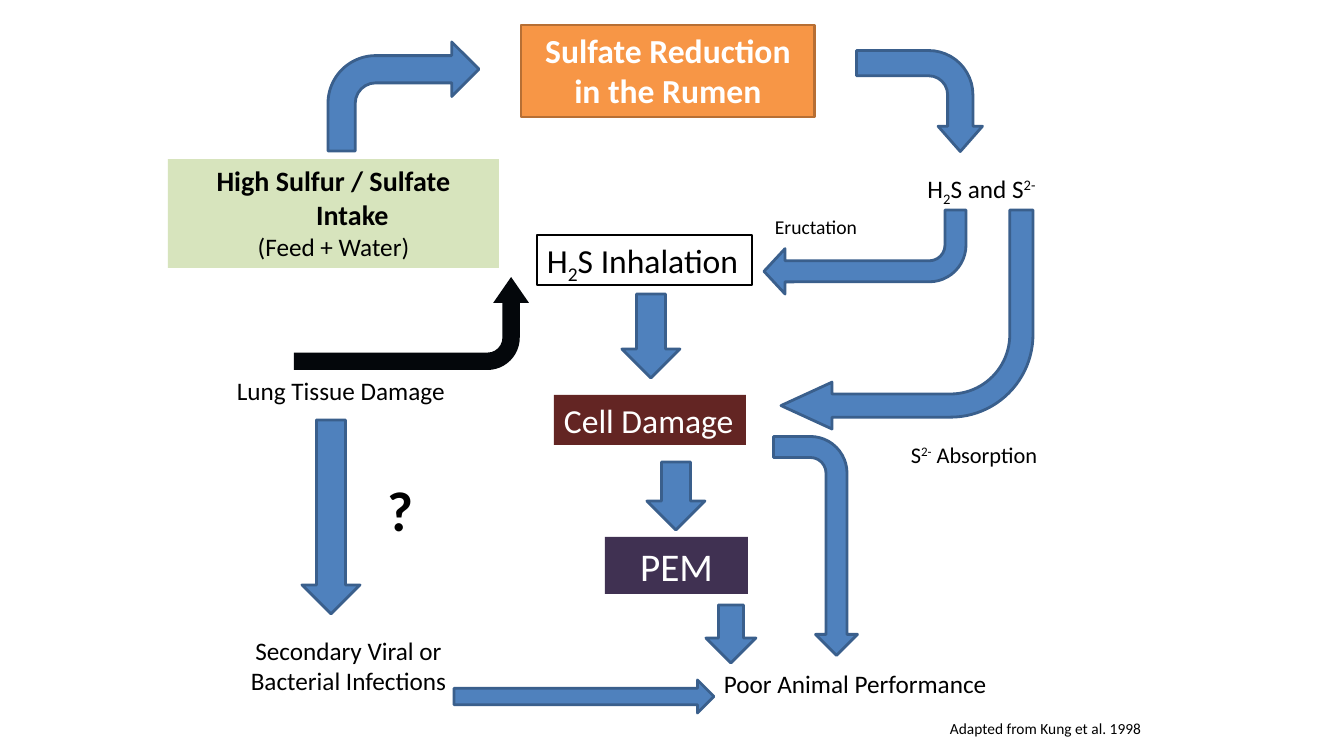
"""Build the slide on sulfur intake, rumen sulfate reduction and animal performance."""
from pptx import Presentation
from pptx import util as u
from pptx.dml.color import RGBColor
from pptx.enum import shapes, text

PX = 914400 / 100.8
COLORS = {
    "black": "000000", "white": "FFFFFF", "intake": "D7E4BD", "rumen": "F79646",
    "rumen edge": "B76F34", "cell": "632523", "pem": "403152",
    "arrow": "4F81BD", "arrow edge": "3A5F8C", "return": "04070B",
}
BASELINES = {"_": "-25000", "^": "30000"}
HANGING = 342900


def px(*lengths):
    return [u.Emu(round(length * PX)) for length in lengths]


def paint(part, fill, edge):
    part.fill.solid()
    part.fill.fore_color.rgb = RGBColor.from_string(COLORS[fill])
    if edge:
        part.line.color.rgb = RGBColor.from_string(COLORS[edge])
        part.line.width = u.Pt(2)
    else:
        part.line.fill.background()


prs = Presentation()
prs.slide_width, prs.slide_height = px(1344, 756)
slide = prs.slides.add_slide(prs.slide_layouts[6])

centre, left = text.PP_ALIGN.CENTER, text.PP_ALIGN.LEFT
steps = [
    ((168, 159, 331, 109), "intake", None, "black", centre, True,
     [(["High Sulfur / Sulfate Intake"], 20, True), (["(Feed + Water)"], 18, False)]),
    ((521, 25, 294, 92), "rumen", "rumen edge", "white", centre, True,
     [(["Sulfate Reduction in the Rumen"], 24, True)]),
    ((915, 168, 133, 40), None, None, "black", centre, False,
     [(["H", "_2", "S and S", "^2-"], 18, False)]),
    ((537, 235, 215, 50), "white", "black", "black", left, False,
     [(["H", "_2", "S Inhalation"], 24, False)]),
    ((764, 210, 104, 34), None, None, "black", centre, False, [(["Eructation"], 14, False)]),
    ((554, 395, 192, 50), "cell", None, "white", left, False, [(["Cell Damage"], 24, False)]),
    ((605, 537, 143, 57), "pem", None, "white", centre, True, [(["PEM"], 28, False)]),
    ((714, 663, 285, 40), None, None, "black", left, False,
     [(["Poor Animal Performance"], 18, False)]),
    ((227, 370, 231, 40), None, None, "black", left, False,
     [(["Lung Tissue Damage"], 18, False)]),
    ((235, 630, 227, 72), None, None, "black", centre, True,
     [(["Secondary Viral or Bacterial Infections"], 18, False)]),
    ((899, 436, 150, 37), None, None, "black", centre, False,
     [(["S", "^2-", " Absorption"], 16, False)]),
    ((378, 471, 50, 78), None, None, "black", left, True, [(["?"], 40, True)]),
    ((940, 714, 214, 29), None, None, "black", left, False,
     [(["Adapted from Kung et al. 1998"], 11, False)]),
]
for place, fill, edge, ink, align, wrap, paragraphs in steps:
    if fill:
        step = slide.shapes.add_shape(shapes.MSO_SHAPE.RECTANGLE, *px(*place))
        step.shadow.inherit = False
        paint(step, fill, edge)
    else:
        step = slide.shapes.add_textbox(*px(*place))
    frame = step.text_frame
    frame_format = {"word_wrap": wrap, "vertical_anchor": text.MSO_ANCHOR.TOP,
                    "auto_size": text.MSO_AUTO_SIZE.SHAPE_TO_FIT_TEXT}
    for name, value in frame_format.items():
        setattr(frame, name, value)
    for index, (pieces, size, bold) in enumerate(paragraphs):
        paragraph = frame.add_paragraph() if index else frame.paragraphs[0]
        paragraph.alignment = align
        if fill == "intake":
            properties = paragraph._p.get_or_add_pPr()
            properties.set("marL", str(HANGING))
            properties.set("indent", str(-HANGING))
        for piece in pieces:
            run = paragraph.add_run()
            run.text = piece.lstrip("_^")
            if piece[0] in BASELINES:
                run._r.get_or_add_rPr().set("baseline", BASELINES[piece[0]])
            run_format = {"name": "Calibri", "size": u.Pt(size), "bold": bold}
            for name, value in run_format.items():
                setattr(run.font, name, value)
            run.font.color.rgb = RGBColor.from_string(COLORS[ink])

bent, down = shapes.MSO_SHAPE.BENT_ARROW, shapes.MSO_SHAPE.DOWN_ARROW
right = shapes.MSO_SHAPE.RIGHT_ARROW
arrows = [
    (bent, (328, 42, 151, 109), 0, []),
    (bent, (869, 38, 101, 126), 90, [0.25, 0.22, 0.25, 0.438]),
    (bent, (764, 210, 202, 84), 180, [0.25, 0.27, 0.25, 0.438]),
    (bent, (781, 210, 252, 219), 180, [0.106, 0.107, 0.233, 0.377]),
    (down, (622, 294, 58, 84), 0, []),
    (down, (647, 462, 58, 68), 0, []),
    (down, (706, 605, 50, 58), 0, []),
    (bent, (706, 504, 219, 84), 90, []),
    (right, (454, 680, 260, 33), 0, []),
    (down, (302, 420, 58, 194), 0, []),
    (bent, (365, 206, 93, 235), 90, [0.187, 0.192, 0.277, 0.348]),
]
for kind, place, turn, adjustments in arrows:
    arrow = slide.shapes.add_shape(kind, *px(*place))
    arrow.shadow.inherit = False
    arrow.rotation = turn
    paint(arrow, "arrow", "arrow edge")
    for index, value in enumerate(adjustments):
        arrow.adjustments[index] = value

lung_to_inhalation = arrow
paint(lung_to_inhalation, "return", None)
lung_to_inhalation._element.spPr.get_or_add_xfrm().set("flipH", "1")

prs.save("out.pptx")
